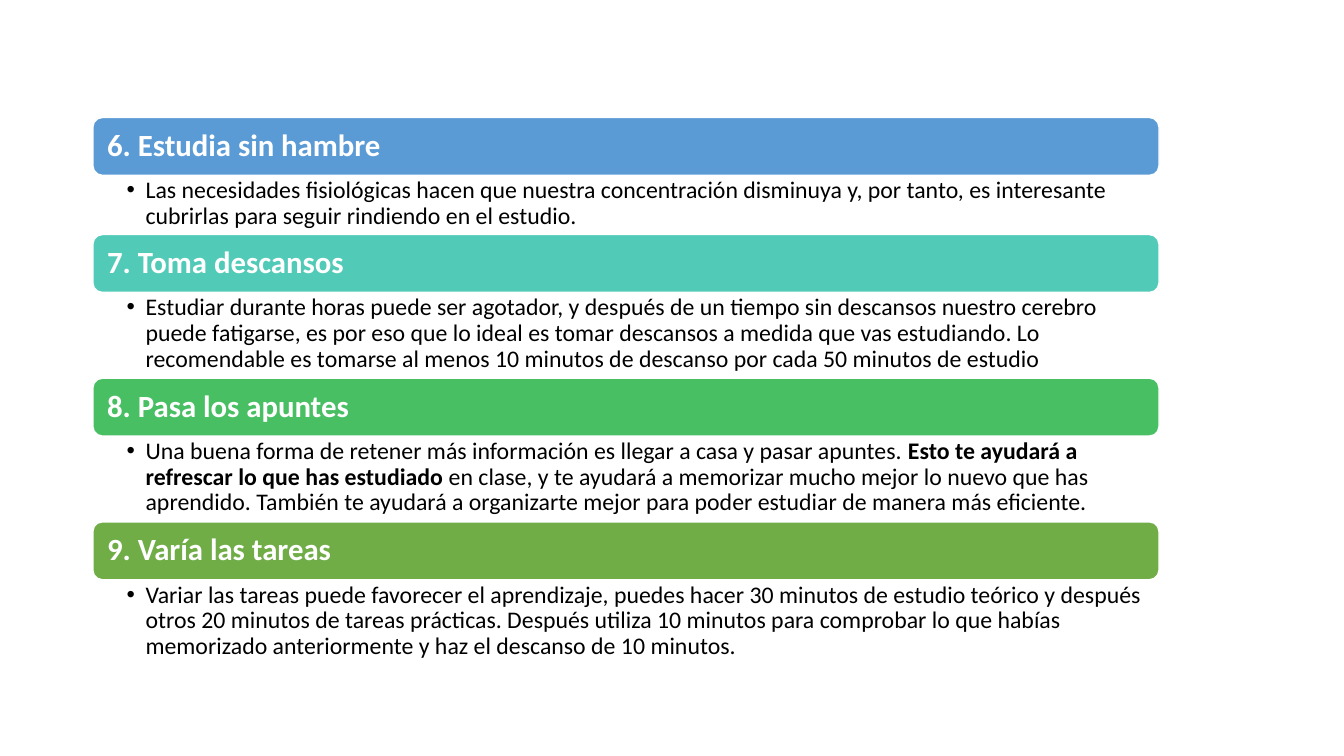
from lxml.etree import SubElement
from pptx import Presentation
from pptx.dml.color import RGBColor
from pptx.enum.shapes import MSO_SHAPE as Preset
from pptx.enum.text import MSO_ANCHOR as Anchor, PP_ALIGN as Align
from pptx.oxml.ns import qn
from pptx.util import Cm, Pt

COLORS = {
    "blue": "5B9BD5",
    "teal": "52CAB8",
    "green": "49BF64",
    "olive": "70AD47",
    "white": "FFFFFF",
    "black": "000000",
}
BAR_HEIGHT = 1.46
TWO_LINES, THREE_LINES = 1.49, 2.16
BAR_FRAME = {
    "word_wrap": True,
    "vertical_anchor": Anchor.MIDDLE,
    "margin_left": Cm(0.29),
    "margin_right": Cm(0.29),
    "margin_top": Cm(0.23),
    "margin_bottom": Cm(0.23),
}
ADVICE_FRAME = {
    "word_wrap": True,
    "vertical_anchor": Anchor.TOP,
    "margin_left": Cm(0.85),
    "margin_right": Cm(0.43),
    "margin_top": Cm(0.07),
    "margin_bottom": Cm(0.07),
}
HEADING_FONT = {"name": "Calibri", "size": Pt(22), "bold": True}
ADVICE_FONT = {"name": "Calibri", "size": Pt(17)}
TIPS = [
    ("6. Estudia sin hambre", "blue", TWO_LINES, [
        ("Las necesidades fisiológicas hacen que nuestra concentración disminuya y, "
         "por tanto, es interesante cubrirlas para seguir rindiendo en el estudio.", False),
    ]),
    ("7. Toma descansos", "teal", THREE_LINES, [
        ("Estudiar durante horas puede ser agotador, y después de un tiempo sin descansos "
         "nuestro cerebro puede fatigarse, es por eso que lo ideal es tomar descansos a "
         "medida que vas estudiando. Lo recomendable es tomarse al menos 10 minutos de "
         "descanso por cada 50 minutos de estudio", False),
    ]),
    ("8. Pasa los apuntes", "green", THREE_LINES, [
        ("Una buena forma de retener más información es llegar a casa y pasar apuntes. ", False),
        ("Esto te ayudará a refrescar lo que has estudiado", True),
        (" en clase, y te ayudará a memorizar mucho mejor lo nuevo que has aprendido. "
         "También te ayudará a organizarte mejor para poder estudiar de manera más "
         "eficiente.", False),
    ]),
    ("9. Varía las tareas", "olive", THREE_LINES, [
        ("Variar las tareas puede favorecer el aprendizaje, puedes hacer 30 minutos de "
         "estudio teórico y después otros 20 minutos de tareas prácticas. Después utiliza "
         "10 minutos para comprobar lo que habías memorizado anteriormente y haz el "
         "descanso de 10 minutos.", False),
    ]),
]


def rgb(name):
    """Return the named colour."""
    return RGBColor.from_string(COLORS[name])


def apply(target, values):
    """Set every attribute in values on target."""
    for name, value in values.items():
        setattr(target, name, value)


def add_run(paragraph, text, font, color):
    """Append a formatted run to the paragraph."""
    run = paragraph.add_run()
    run.text = text
    apply(run.font, font)
    run.font.color.rgb = rgb(color)


def add_bullet(paragraph):
    """Give the paragraph a hanging round bullet."""
    properties = paragraph._p.get_or_add_pPr()
    properties.set("marL", str(Cm(0.48)))
    properties.set("indent", str(-Cm(0.48)))
    SubElement(properties, qn("a:buFont"), typeface="Arial")
    SubElement(properties, qn("a:buChar"), char="•")


def add_heading(slide, left, top, width, height, text, color):
    """Draw a rounded coloured bar holding a heading."""
    bar = slide.shapes.add_shape(
        Preset.ROUNDED_RECTANGLE, Cm(left), Cm(top), Cm(width), Cm(height))
    bar.shadow.inherit = False
    bar.fill.solid()
    bar.fill.fore_color.rgb = rgb(color)
    bar.line.color.rgb = rgb("white")
    bar.line.width = Pt(1)
    apply(bar.text_frame, BAR_FRAME)
    paragraph = bar.text_frame.paragraphs[0]
    apply(paragraph, {"alignment": Align.LEFT, "line_spacing": 0.9})
    add_run(paragraph, text, HEADING_FONT, "white")


def add_advice(slide, left, top, width, height, pieces):
    """Write the bulleted advice below a heading."""
    box = slide.shapes.add_textbox(Cm(left), Cm(top), Cm(width), Cm(height))
    apply(box.text_frame, ADVICE_FRAME)
    paragraph = box.text_frame.paragraphs[0]
    apply(paragraph, {"level": 1, "alignment": Align.LEFT, "line_spacing": 0.9})
    add_bullet(paragraph)
    for text, bold in pieces:
        add_run(paragraph, text, {**ADVICE_FONT, "bold": bold}, "black")


def add_tips(slide, left, top, width):
    """Stack all headings with their advice from top downwards."""
    for heading, color, advice_height, pieces in TIPS:
        add_heading(slide, left, top, width, BAR_HEIGHT, heading, color)
        top += BAR_HEIGHT
        add_advice(slide, left, top, width, advice_height, pieces)
        top += advice_height


def main():
    """Build and save the presentation."""
    presentation = Presentation()
    apply(presentation, {"slide_width": Cm(33.87), "slide_height": Cm(19.05)})
    slide = presentation.slides.add_slide(presentation.slide_layouts[6])
    add_tips(slide, 2.34, 2.96, 26.87)
    presentation.save("out.pptx")


if __name__ == "__main__":
    main()
